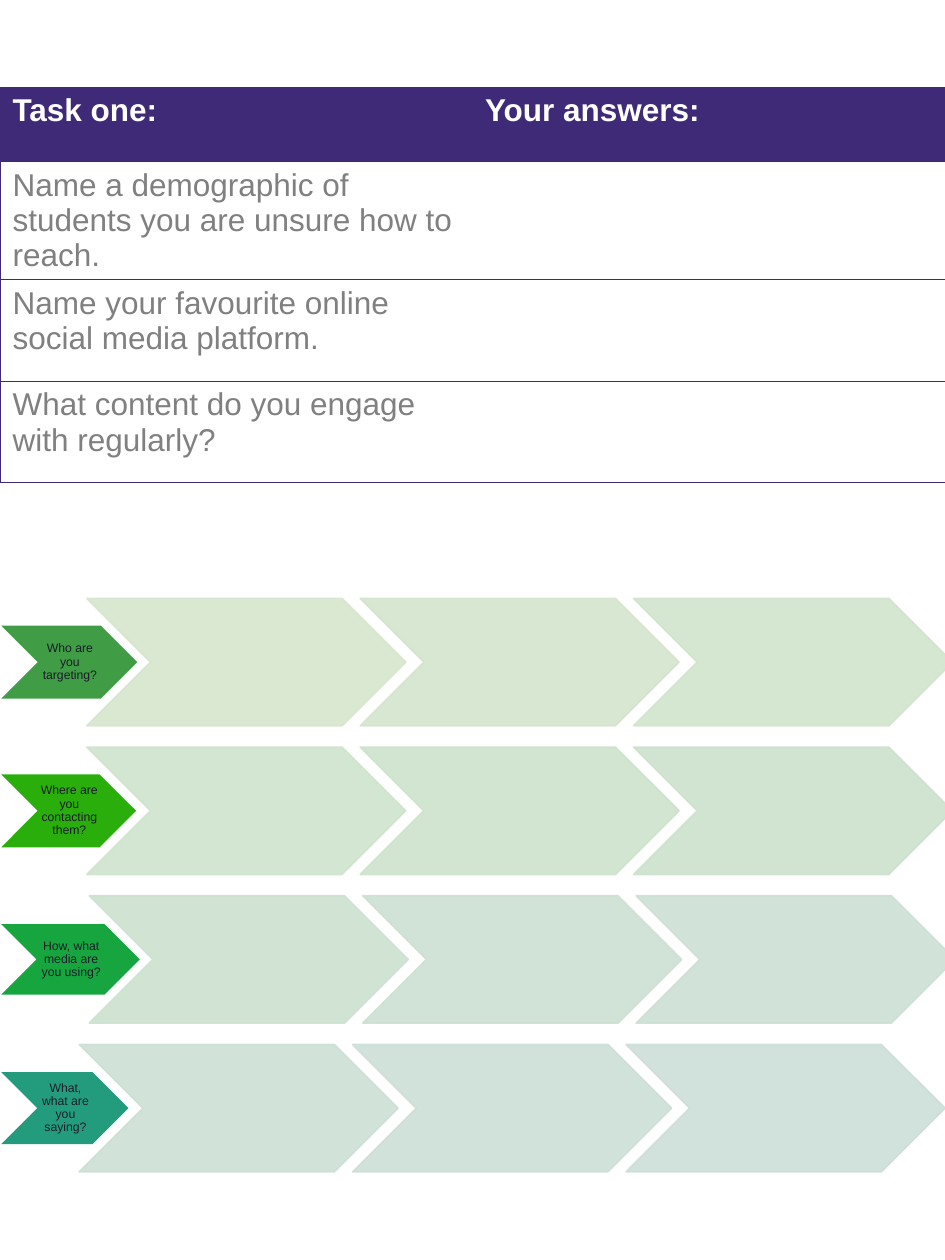
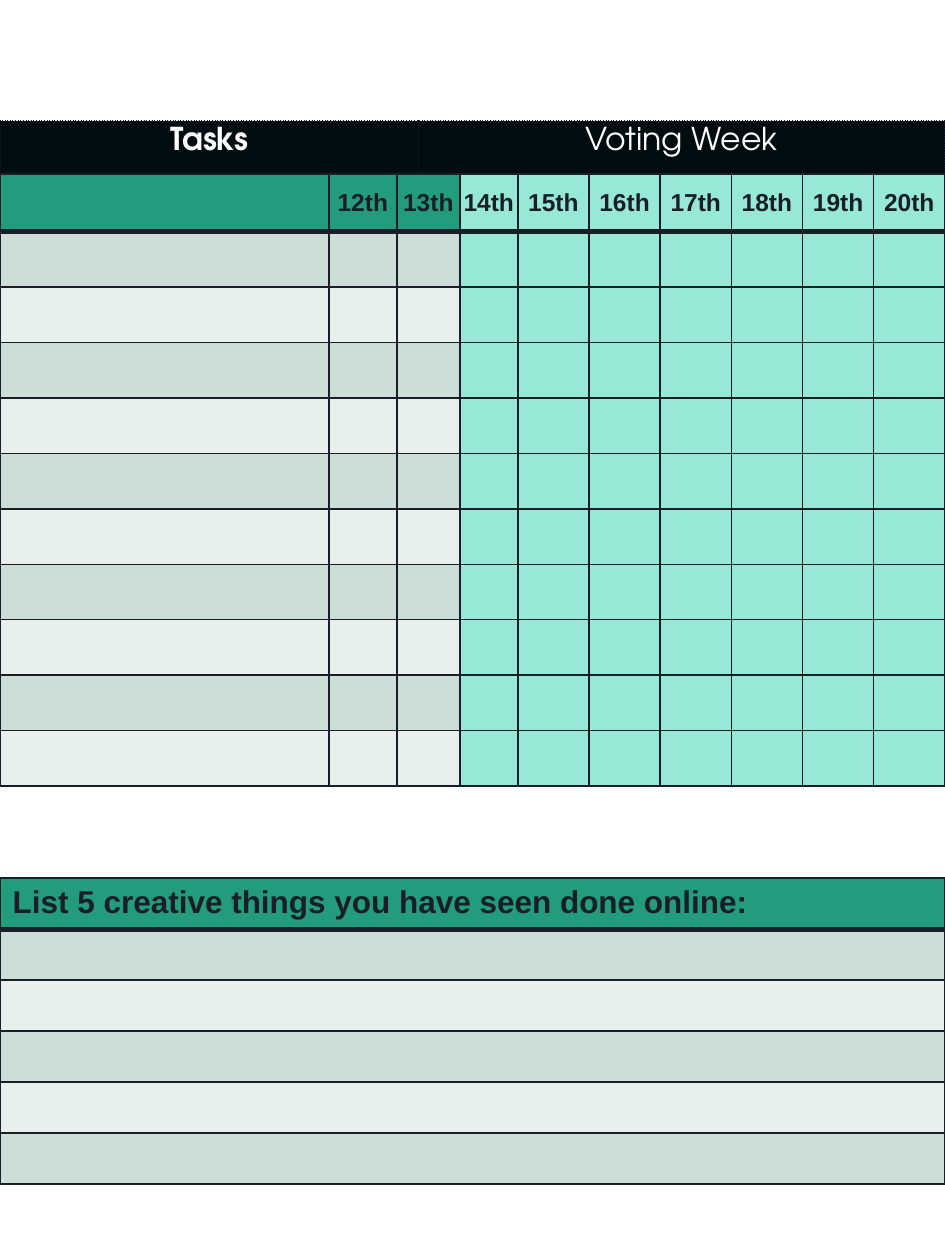
from dataclasses import dataclass

import pptx
import pptx.dml.color
import pptx.enum.shapes
import pptx.enum.text
import pptx.oxml.ns
import pptx.util
from lxml import etree

Inches = pptx.util.Inches
ALIGN = pptx.enum.text.PP_ALIGN
ANCHOR = pptx.enum.text.MSO_ANCHOR


@dataclass(frozen=True)
class Theme:
    purple: str = "3E2A77"
    grey: str = "808080"
    white: str = "FFFFFF"
    ink: str = "191E28"
    black: str = "000C10"
    teal: str = "239C7E"
    mint: str = "97E8D4"
    band_dark: str = "CDDED8"
    band_light: str = "E8EFEC"
    font: str = "Arial"
    title_font: str = "TeX Gyre Adventor"
    large: float = 18
    medium: float = 14
    small: float = 7


THEME = Theme()

# Label, label colour, label width and height, row left, step colours
CHEVRON_ROWS = [
    ("Who are you targeting?", "409D45", 1.08, 0.58, 0.69, ("D6E6CC", "D4E5CC", "D1E4CC")),
    ("Where are you contacting them?", "29AE0B", 1.07, 0.58, 0.69, ("CFE4CC", "CDE3CC", "CDE2CE")),
    ("How, what media are you using?", "17A540", 1.1, 0.56, 0.71, ("CDE2D0", "CDE1D2", "CDE0D4")),
    ("What, what are you saying?", "239C7E", 1.01, 0.57, 0.63, ("CDE0D5", "CDDFD7", "CDDED8")),
]
QUESTIONS = [
    "Name a demographic of students you are unsure how to reach.",
    "Name your favourite online social media platform.",
    "What content do you engage with regularly?",
]


def rgb(color):
    return pptx.dml.color.RGBColor.from_string(color)


def add_run(para, text, size, color, bold=False, font=THEME.font):
    span = para.add_run()
    span.text = text
    span.font.size = pptx.util.Pt(size)
    span.font.name = font
    span.font.bold = bold
    span.font.color.rgb = rgb(color)


def add_grid(page, box, columns, rows):
    """Add a plain table whose cells are styled one by one."""
    left, top, width, height = box
    frame = page.shapes.add_table(len(rows), len(columns), Inches(left), Inches(top),
                                  Inches(width), Inches(height))
    table = frame.table
    table.first_row = table.horz_banding = False
    for column, size in zip(table.columns, columns):
        column.width = Inches(size)
    for row, size in zip(table.rows, rows):
        row.height = Inches(size)
    return table


def style_cell(cell, fill, color, widths, dash="solid"):
    """Draw borders with widths keyed by side (L, R, T, B), then fill."""
    properties = cell._tc.get_or_add_tcPr()
    qn = pptx.oxml.ns.qn
    for side in "LRTB":
        line = etree.SubElement(properties, qn(f"a:ln{side}"))
        if side not in widths:
            etree.SubElement(line, qn("a:noFill"))
            continue
        line.set("w", str(pptx.util.Pt(widths[side])))
        solid = etree.SubElement(line, qn("a:solidFill"))
        etree.SubElement(solid, qn("a:srgbClr"), val=color)
        etree.SubElement(line, qn("a:prstDash"), val=dash)
    if fill:
        cell.fill.solid()
        cell.fill.fore_color.rgb = rgb(fill)
    else:
        cell.fill.background()


def ruled_widths(row):
    """Thin rules all round, with a heavy rule under the header row."""
    return {"L": 1, "R": 1, "T": 3 if row == 1 else 1, "B": 3 if row == 0 else 1}


def band_color(row):
    return THEME.band_dark if row % 2 else THEME.band_light


def add_question_table(page, box):
    width, height = box[2:]
    header = 0.59
    row_height = (height - header) / len(QUESTIONS)
    table = add_grid(page, box, [width / 2] * 2, [header] + [row_height] * len(QUESTIONS))
    texts = [("Task one:", "Your answers:")] + [(question, "") for question in QUESTIONS]
    for row, pair in enumerate(texts):
        for column, text in enumerate(pair):
            cell = table.cell(row, column)
            outer_side = "R" if column else "L"
            style_cell(cell, None if row else THEME.purple, THEME.purple,
                       {outer_side: 0.5, "T": 0.5, "B": 0.5})
            if text:
                add_run(cell.text_frame.paragraphs[0], text, THEME.large,
                        THEME.grey if row else THEME.white, bold=row == 0)


def add_chevron(group, box, color, alpha=None):
    shape = group.shapes.add_shape(pptx.enum.shapes.MSO_SHAPE.CHEVRON,
                                   *(Inches(value) for value in box))
    shape.shadow.inherit = False
    shape.fill.solid()
    shape.fill.fore_color.rgb = rgb(color)
    if alpha is None:
        shape.line.fill.background()
        return
    shape.line.color.rgb = rgb(color)
    shape.line.width = pptx.util.Pt(1)
    qn = pptx.oxml.ns.qn
    for tint in shape._element.spPr.iter(qn("a:srgbClr")):
        etree.SubElement(tint, qn("a:alpha"), val=str(alpha * 1000))


def add_label(group, box, text):
    label = group.shapes.add_textbox(*(Inches(value) for value in box))
    frame = label.text_frame
    frame.word_wrap = True
    frame.vertical_anchor = ANCHOR.MIDDLE
    frame.margin_left = Inches(0.01)
    frame.margin_right = frame.margin_top = frame.margin_bottom = 0
    para = frame.paragraphs[0]
    para.alignment = ALIGN.CENTER
    para.line_spacing = 0.9
    add_run(para, text, THEME.small, THEME.ink)


def add_chevron_rows(page, box):
    left, top, _, height = box
    step_width, step_height, step_pitch = 2.53, 1.01, 2.17
    row_pitch = (height - step_height) / (len(CHEVRON_ROWS) - 1)
    group = page.shapes.add_group_shape()
    for index, (text, color, width, label_height, start, steps) in enumerate(CHEVRON_ROWS):
        row_top = top + index * row_pitch
        # Label, centred on its row, with the text between notch and point
        label_top = row_top + (step_height - label_height) / 2
        point = label_height / 2
        add_chevron(group, (left + 0.01, label_top, width, label_height), color)
        add_label(group, (left + 0.01 + point, label_top, width - 2 * point, label_height), text)
        # Empty steps to write in
        for step, step_color in enumerate(steps):
            step_left = left + start + step * step_pitch
            add_chevron(group, (step_left, row_top, step_width, step_height), step_color, 90)


def add_calendar_heading(page, box):
    width, height = box[2:]
    table = add_grid(page, box, [3.32, width - 3.32], [height])
    for column, (text, bold) in enumerate([("Tasks", True), ("Voting Week", False)]):
        cell = table.cell(0, column)
        style_cell(cell, THEME.black, THEME.ink, dict.fromkeys("LRTB", 1), "sysDot")
        cell.margin_left = cell.margin_right = Inches(0.11)
        para = cell.text_frame.paragraphs[0]
        para.alignment = ALIGN.CENTER
        add_run(para, text, THEME.large, THEME.white, bold, THEME.title_font)


def add_calendar(page, box):
    width = box[2]
    first_columns = [2.61, 0.54, 0.5, 0.46]
    columns = first_columns + [(width - sum(first_columns)) / 6] * 6
    rows = [0.46] + [0.44] * 10
    table = add_grid(page, box, columns, rows)
    for row in range(len(rows)):
        for column in range(len(columns)):
            cell = table.cell(row, column)
            if column >= 3:
                fill = THEME.mint
            else:
                fill = band_color(row) if row else THEME.teal
            style_cell(cell, fill, THEME.ink, ruled_widths(row))
            # Dates run from the 12th in the second column
            if row == 0 and column:
                cell.vertical_anchor = ANCHOR.MIDDLE
                cell.margin_left = cell.margin_right = 0
                cell.margin_top = cell.margin_bottom = 0
                para = cell.text_frame.paragraphs[0]
                para.alignment = ALIGN.CENTER
                add_run(para, f"{column + 11}th", THEME.medium, THEME.ink, True)


def add_idea_list(page, box):
    width, height = box[2:]
    table = add_grid(page, box, [width], [height / 6] * 6)
    for row in range(6):
        style_cell(table.cell(row, 0), band_color(row) if row else THEME.teal,
                   THEME.ink, ruled_widths(row))
    add_run(table.cell(0, 0).text_frame.paragraphs[0],
            "List 5 creative things you have seen done online:",
            THEME.large, THEME.ink, True)


def main():
    deck = pptx.Presentation()
    deck.slide_width, deck.slide_height = Inches(7.5), Inches(10)
    blank = deck.slide_layouts[6]

    # Audience questions and campaign steps
    page = deck.slides.add_slide(blank)
    add_question_table(page, (0, 0.69, 7.5, 3))
    add_chevron_rows(page, (0, 4.75, 7.5, 4.55))

    # Voting week planner and idea list
    page = deck.slides.add_slide(blank)
    add_calendar_heading(page, (0, 0.96, 7.5, 0.42))
    add_calendar(page, (0, 1.38, 7.5, 4.86))
    add_idea_list(page, (0, 6.97, 7.5, 2.43))

    deck.save("out.pptx")


if __name__ == "__main__":
    main()
